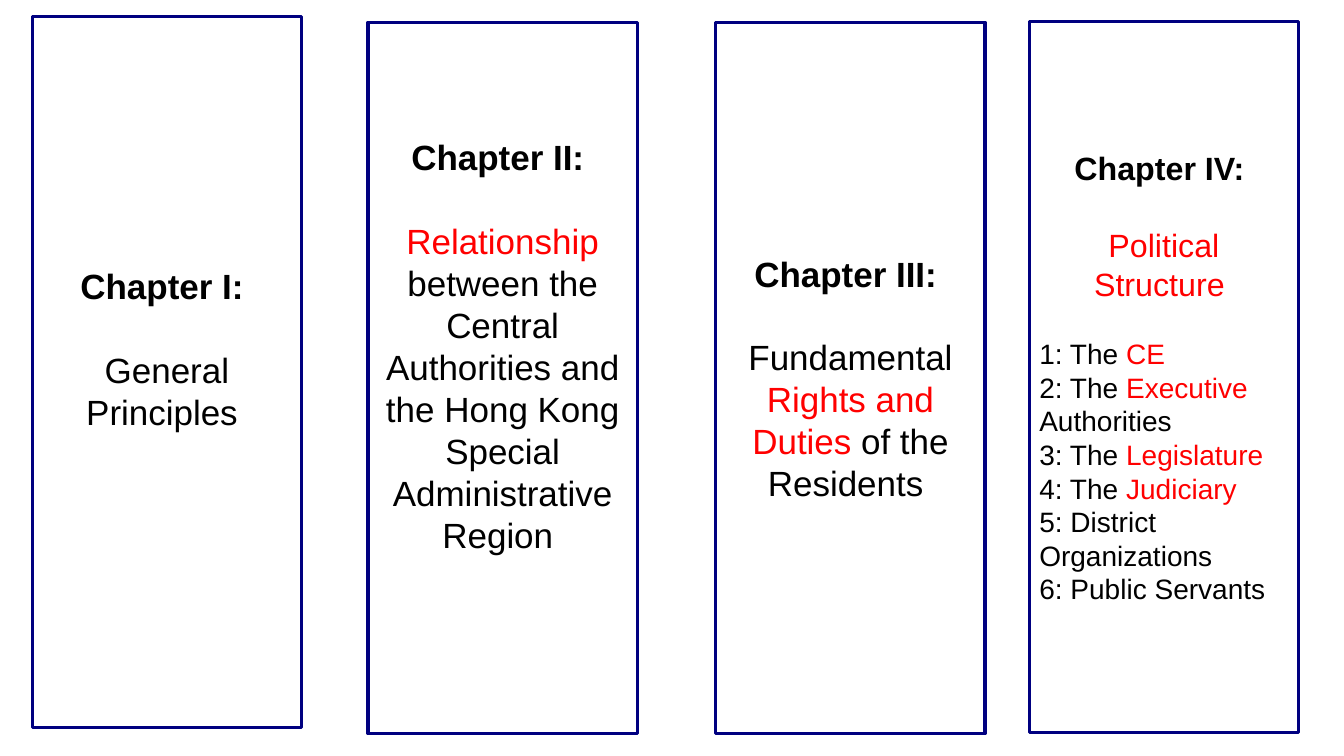
from pptx import Presentation
from pptx import util as u
from pptx.dml.color import RGBColor
from pptx.enum import shapes, text

NAVY, BLACK, RED = "000080", "000000", "FF0000"
LINE_HEIGHT = 1.2  # line pitch as a multiple of the font size


def color(hex_string):
    return RGBColor.from_string(hex_string)


def add_panel(slide, left, top, bottom_inset=0.1):
    """Add an outlined chapter panel and return its text frame."""
    shape = slide.shapes.add_shape(
        shapes.MSO_SHAPE.RECTANGLE,
        u.Inches(left), u.Inches(top), u.Inches(2.67), u.Inches(7.06))
    shape.shadow.inherit = False
    shape.fill.background()
    shape.line.color.rgb = color(NAVY)
    shape.line.width = u.Pt(2.25)
    frame = shape.text_frame
    frame.word_wrap = True
    frame.vertical_anchor = text.MSO_ANCHOR.MIDDLE
    frame.margin_left = frame.margin_right = frame.margin_top = u.Inches(0.1)
    frame.margin_bottom = u.Inches(bottom_inset)
    return frame


def write(paragraph, content, size, bold=False, centered=True, gap=0):
    """Fill a paragraph; parts between bars are red, gap is in blank lines."""
    align = text.PP_ALIGN
    paragraph.alignment = align.CENTER if centered else align.LEFT
    paragraph.line_spacing = u.Pt(size * LINE_HEIGHT)
    paragraph.space_before = u.Pt(gap * size * LINE_HEIGHT)
    for index, part in enumerate(content.split("|")):
        if not part:
            continue
        run = paragraph.add_run()
        run.text = part
        run.font.name = "Arial"
        run.font.size = u.Pt(size)
        run.font.bold = bold
        run.font.color.rgb = color(RED if index % 2 else BLACK)


def add_chapter(slide, left, top, title, body, size=25, items=(), bottom_inset=0.1):
    frame = add_panel(slide, left, top, bottom_inset)
    write(frame.paragraphs[0], title, size, bold=True)
    write(frame.add_paragraph(), body, size, gap=1)
    for index, item in enumerate(items):
        write(frame.add_paragraph(), item, 20, centered=False,
              gap=1 if index == 0 else 0)


def main():
    presentation = Presentation()
    presentation.slide_width = u.Inches(13.33)
    presentation.slide_height = u.Inches(7.5)
    slide = presentation.slides.add_slide(presentation.slide_layouts[6])

    # Chapters I to III: title and subject
    add_chapter(slide, 0.32, 0.16, "Chapter I: ", "General Principles ",
                bottom_inset=0.57)
    add_chapter(slide, 3.65, 0.22, "Chapter II: ",
                "|Relationship| between the Central Authorities and the "
                "Hong Kong Special Administrative Region ",
                bottom_inset=0.75)
    add_chapter(slide, 7.1, 0.22, "Chapter III: ",
                "Fundamental |Rights and Duties| of the Residents ")

    # Chapter IV: title, subject and list of sections
    add_chapter(slide, 10.21, 0.21, "Chapter IV: ", "|Political Structure |",
                size=23,
                items=["1: The |CE|", "2: The |Executive| Authorities",
                       "3: The |Legislature|", "4: The |Judiciary|",
                       "5: District Organizations", "6: Public Servants"])

    presentation.save("out.pptx")


if __name__ == "__main__":
    main()
